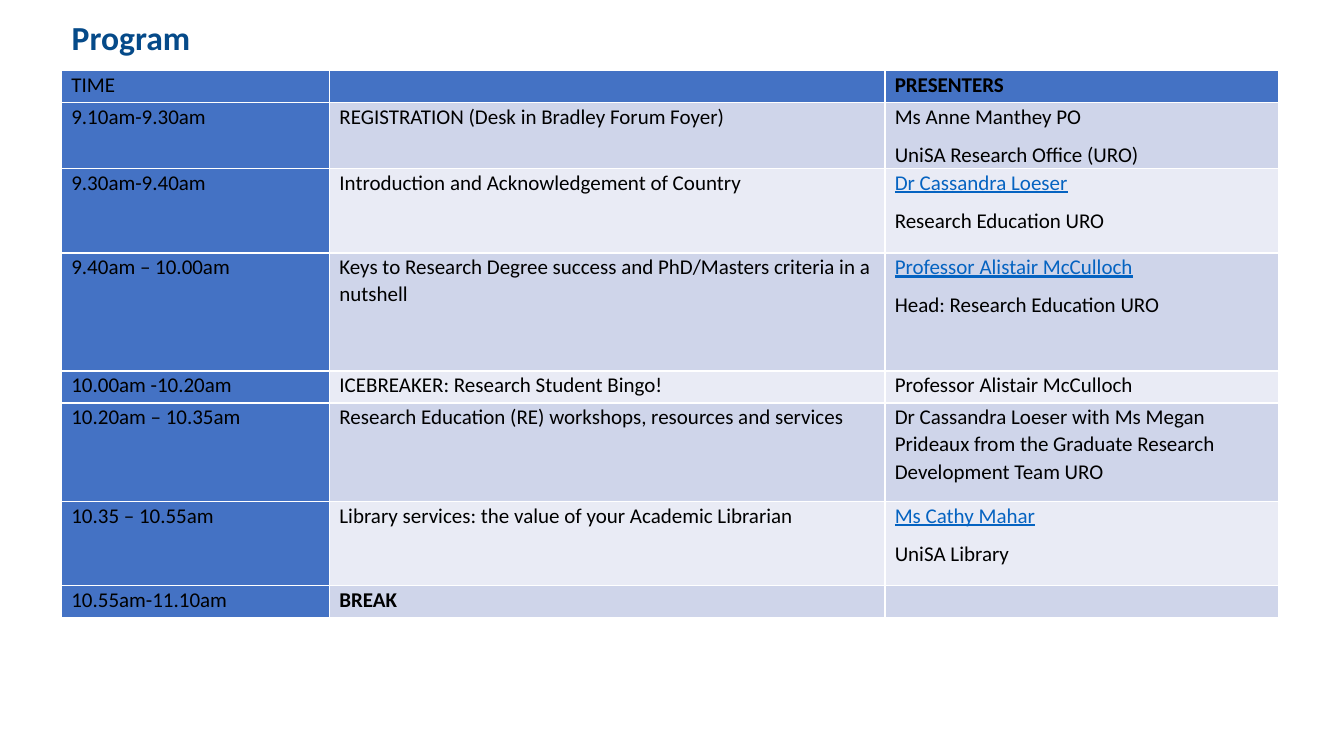
from dataclasses import dataclass

from lxml.etree import SubElement
from pptx import Presentation
from pptx.dml.color import RGBColor
from pptx.enum.text import MSO_ANCHOR, PP_ALIGN
from pptx.oxml.ns import qn
from pptx.util import Pt


@dataclass(frozen=True)
class Theme:
    font: str = "Calibri"
    title_size: float = 24
    table_size: float = 15
    title: str = "054A89"
    text: str = "000000"
    link: str = "0563C1"
    accent: str = "4472C4"
    bands: tuple = ("CFD5EA", "E9EBF5")
    border: str = "FFFFFF"


THEME = Theme()
TITLE_BOX = (44, 11, 870, 34)
TABLE_BOX = (44, 50.4, 869.7, 391.1)
COLUMN_WIDTHS = (191.5, 396.7, 281.5)
ROW_HEIGHTS = (22.9, 47.2, 60.2, 84.4, 22.9, 70.4, 60.2, 22.9)

# Each cell is a list of paragraphs: (text, style)
PROGRAM = [
    ([("TIME", "")], [], [("PRESENTERS", "bold")]),
    ([("9.10am-9.30am", "")],
     [("REGISTRATION (Desk in Bradley Forum Foyer)", "")],
     [("Ms Anne Manthey PO", ""), ("UniSA Research Office (URO)", "")]),
    ([("9.30am-9.40am", "")],
     [("Introduction and Acknowledgement of Country", "")],
     [("Dr Cassandra Loeser", "link"), ("Research Education URO", "")]),
    ([("9.40am – 10.00am", "")],
     [("Keys to Research Degree success and PhD/Masters criteria in a nutshell", "")],
     [("Professor Alistair McCulloch", "link"), ("Head: Research Education URO", "")]),
    ([("10.00am -10.20am", "")],
     [("ICEBREAKER: Research Student Bingo!", "")],
     [("Professor Alistair McCulloch", "")]),
    ([("10.20am – 10.35am", "")],
     [("Research Education (RE) workshops, resources and services", "")],
     [("Dr Cassandra Loeser with Ms Megan Prideaux from the Graduate Research "
       "Development Team URO", "")]),
    ([("10.35 – 10.55am", "")],
     [("Library services: the value of your Academic Librarian", "")],
     [("Ms Cathy Mahar", "link"), ("UniSA Library", "")]),
    ([("10.55am-11.10am", "")], [("BREAK", "bold")], []),
]


def add_span(para, text, size, color, bold=False, underline=False):
    span = para.add_run()
    span.text = text
    font = span.font
    font.name, font.size = THEME.font, Pt(size)
    font.bold, font.underline = bold, underline
    font.color.rgb = RGBColor.from_string(color)


def add_title(page, box, text):
    title = page.shapes.title
    title.left, title.top, title.width, title.height = map(Pt, box)
    frame = title.text_frame
    frame.vertical_anchor = MSO_ANCHOR.MIDDLE
    para = frame.paragraphs[0]
    para.alignment = PP_ALIGN.LEFT
    para.line_spacing = 0.9
    add_span(para, text, THEME.title_size, THEME.title, bold=True)


def set_borders(cell):
    properties = cell._tc.get_or_add_tcPr()
    for side in ("a:lnL", "a:lnR", "a:lnT", "a:lnB"):
        line = SubElement(properties, qn(side), w=str(Pt(1)))
        fill = SubElement(line, qn("a:solidFill"))
        SubElement(fill, qn("a:srgbClr"), val=THEME.border)


def fill_cell(cell, paragraphs, color):
    set_borders(cell)
    cell.fill.solid()
    cell.fill.fore_color.rgb = RGBColor.from_string(color)
    cell.margin_left = cell.margin_right = Pt(7)
    cell.margin_top = cell.margin_bottom = Pt(0)
    frame = cell.text_frame
    for index, (text, style) in enumerate(paragraphs):
        para = frame.add_paragraph() if index else frame.paragraphs[0]
        para.line_spacing = 1.06
        para.space_after = Pt(8)
        is_link = style == "link"
        add_span(para, text, THEME.table_size, THEME.link if is_link else THEME.text,
                 bold=style == "bold", underline=is_link)


def add_program(page, box, rows):
    table = page.shapes.add_table(len(rows), len(COLUMN_WIDTHS), *map(Pt, box)).table
    for column, width in zip(table.columns, COLUMN_WIDTHS):
        column.width = Pt(width)
    for row, height in zip(table.rows, ROW_HEIGHTS):
        row.height = Pt(height)
    for row_index, row in enumerate(rows):
        for column_index, paragraphs in enumerate(row):
            is_heading = row_index == 0 or column_index == 0
            color = THEME.accent if is_heading else THEME.bands[(row_index - 1) % 2]
            fill_cell(table.cell(row_index, column_index), paragraphs, color)


def main():
    deck = Presentation()
    deck.slide_width, deck.slide_height = Pt(960), Pt(540)
    page = deck.slides.add_slide(deck.slide_layouts[5])
    # Heading
    add_title(page, TITLE_BOX, "Program")
    # Timetable
    add_program(page, TABLE_BOX, PROGRAM)
    deck.save("out.pptx")


if __name__ == "__main__":
    main()
